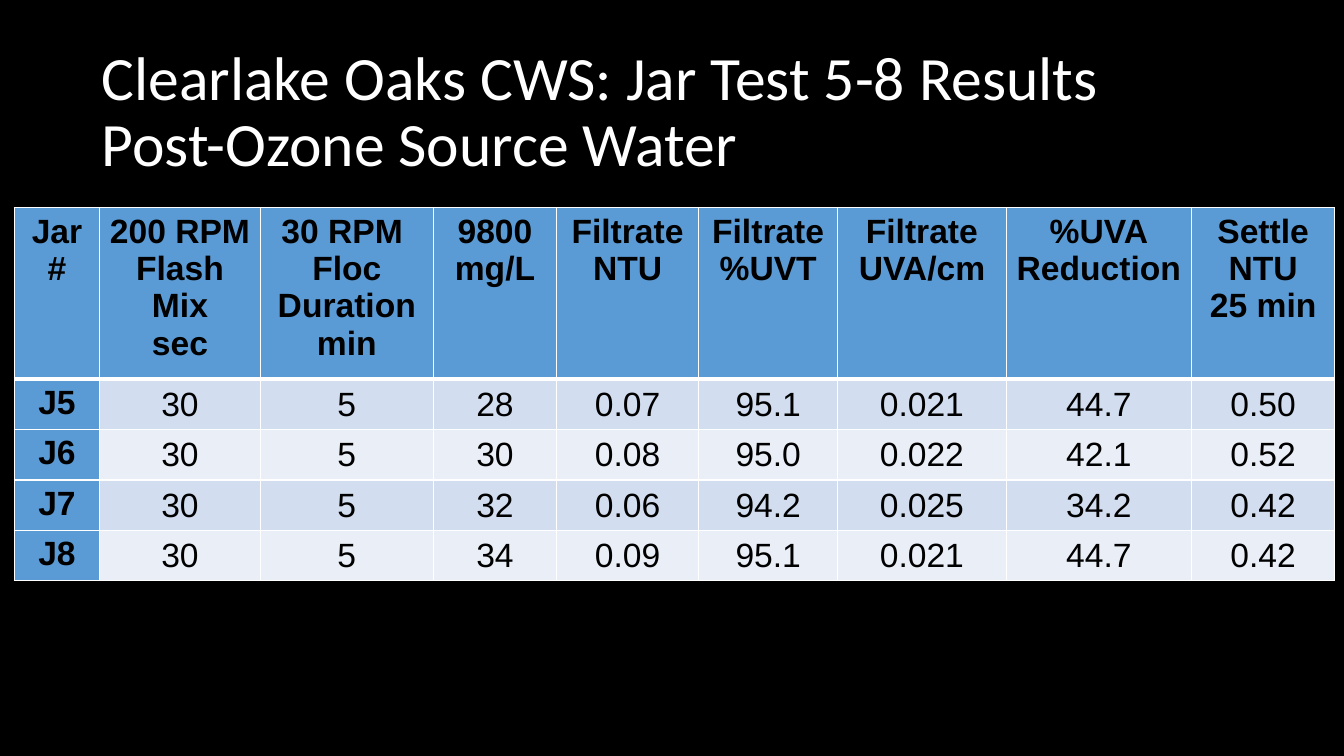
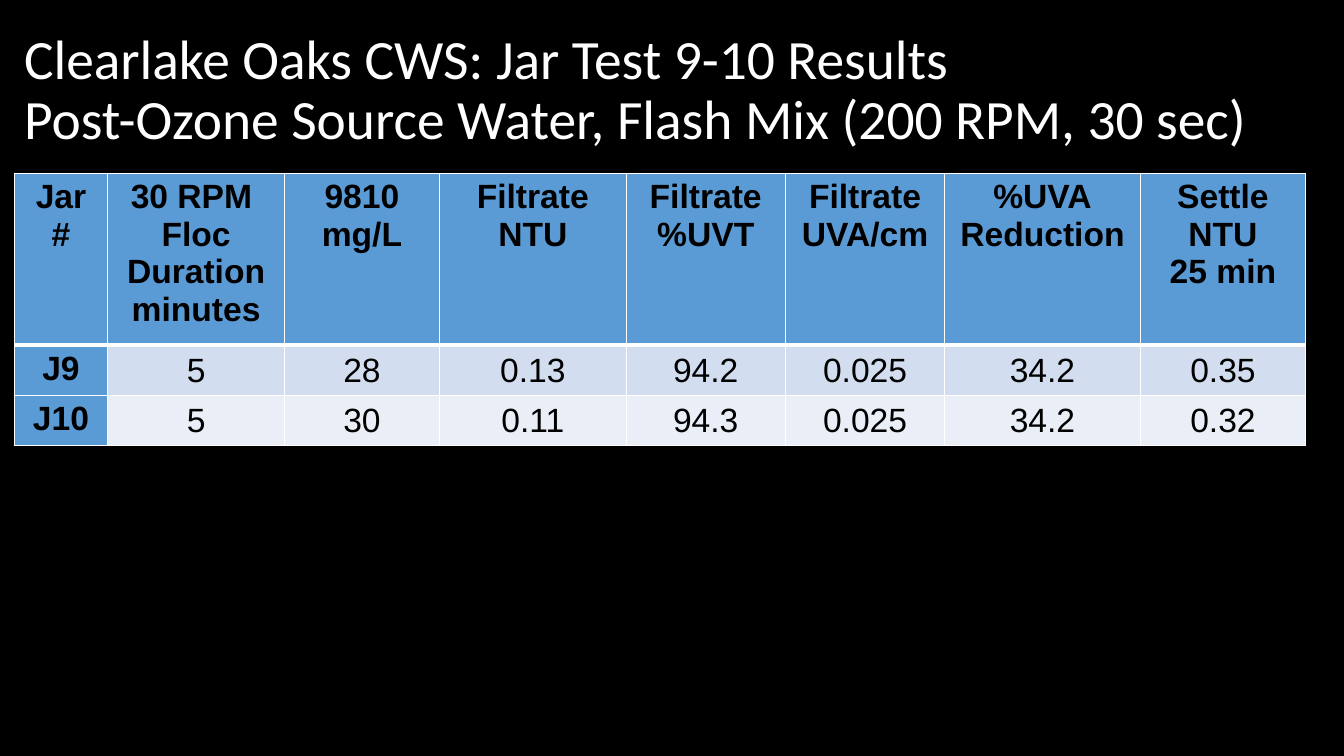
from lxml import etree
from pptx import Presentation
from pptx.dml.color import RGBColor
from pptx.enum.text import MSO_ANCHOR, PP_ALIGN
from pptx.oxml.ns import qn
from pptx.util import Inches, Pt

LEFT, CENTER = PP_ALIGN.LEFT, PP_ALIGN.CENTER
TOP, MIDDLE = MSO_ANCHOR.TOP, MSO_ANCHOR.MIDDLE

COLORS = {
    "back": "000000",
    "title": "FFFFFF",
    "text": "000000",
    "head": "5B9BD5",
    "odd": "D2DEEF",
    "even": "EAEFF7",
    "rule": "FFFFFF",
}
HEAD_H, ROW_H = 1.58, 0.47
THIN, THICK = 1, 3
SIDES = ("left", "top", "right", "bottom")
LABEL = {"anchor": TOP, "pads": (0.1, 0.05, 0.1, 0.05)}
VALUE = {"anchor": MIDDLE, "pads": (0.01, 0.01, 0.01, 0)}

FILTER = ["Filtrate\nNTU", "Filtrate\n%UVT", "Filtrate\nUVA/cm",
          "%UVA\nReduction", "Settle\nNTU\n25 min"]

SLIDES = [
    {
        "title": "Clearlake Oaks CWS: Jar Test 5-8 Results\n"
                 "Post-Ozone Source Water",
        "size": 44,
        "box": (0.91, 0.4, 11.51, 1.45),
        "spot": (0.14, 2.06),
        "cols": [0.85, 1.59, 1.72, 1.22, 1.41, 1.38, 1.67, 1.84, 1.42],
        "rows": [
            ["Jar\n#", "200 RPM \nFlash\nMix\nsec",
             "30 RPM \nFloc\nDuration\nmin", "9800\nmg/L"] + FILTER,
            ["J5", "30", "5", "28", "0.07", "95.1", "0.021", "44.7", "0.50"],
            ["J6", "30", "5", "30", "0.08", "95.0", "0.022", "42.1", "0.52"],
            ["J7", "30", "5", "32", "0.06", "94.2", "0.025", "34.2", "0.42"],
            ["J8", "30", "5", "34", "0.09", "95.1", "0.021", "44.7", "0.42"],
        ],
    },
    {
        "title": "Clearlake Oaks CWS: Jar Test 9-10 Results\n"
                 "Post-Ozone Source Water, Flash Mix (200 RPM, 30 sec)",
        "size": 39.6,
        "box": (0.14, 0.18, 12.92, 1.45),
        "spot": (0.14, 1.72),
        "cols": [0.93, 1.75, 1.54, 1.85, 1.58, 1.58, 1.94, 1.64],
        "rows": [
            ["Jar\n#", "30 RPM \nFloc\nDuration\nminutes",
             "9810\nmg/L"] + FILTER,
            ["J9", "5", "28", "0.13", "94.2", "0.025", "34.2", "0.35"],
            ["J10", "5", "30", "0.11", "94.3", "0.025", "34.2", "0.32"],
        ],
    },
]


def paint(fill, color):
    fill.solid()
    fill.fore_color.rgb = RGBColor.from_string(COLORS[color])


def write(frame, text, color, align, gap, style):
    """Fill a text frame, one paragraph for each line of text."""
    frame.text = text
    for para in frame.paragraphs:
        para.alignment = align
        para.line_spacing = gap
        font = para.runs[0].font
        for key, val in style.items():
            setattr(font, key, val)
        font.color.rgb = RGBColor.from_string(COLORS[color])


def add_title(slide, box, text, size):
    frame = slide.shapes.add_textbox(*map(Inches, box)).text_frame
    frame.word_wrap = True
    frame.vertical_anchor = MIDDLE
    write(frame, text, "title", LEFT, 0.9,
          {"name": "Calibri", "size": Pt(size), "bold": False})


def edge(cell, top, bottom):
    """Rule all four sides of a cell; top and bottom are widths in points."""
    props = cell._tc.get_or_add_tcPr()
    widths = {"lnL": THIN, "lnR": THIN, "lnT": top, "lnB": bottom}
    for tag, width in widths.items():
        line = etree.SubElement(props, qn("a:" + tag), w=str(Pt(width)))
        solid = etree.SubElement(line, qn("a:solidFill"))
        etree.SubElement(solid, qn("a:srgbClr"), val=COLORS["rule"])


def add_cell(cell, text, row, col):
    label = row == 0 or col == 0
    form = LABEL if label else VALUE
    cell.vertical_anchor = form["anchor"]
    for side, pad in zip(SIDES, form["pads"]):
        setattr(cell, "margin_" + side, Inches(pad))
    edge(cell, THICK if row == 1 else THIN, THICK if row == 0 else THIN)
    paint(cell.fill, "head" if label else "odd" if row % 2 else "even")
    write(cell.text_frame, text, "text", CENTER, 1.0,
          {"name": "Arial", "size": Pt(24), "bold": label})


def add_grid(slide, spot, cols, rows):
    highs = [HEAD_H] + [ROW_H] * (len(rows) - 1)
    box = (*spot, sum(cols), sum(highs))
    table = slide.shapes.add_table(
        len(rows), len(cols), *map(Inches, box)).table
    for col, width in zip(table.columns, cols):
        col.width = Inches(width)
    for row, high in zip(table.rows, highs):
        row.height = Inches(high)
    for r, row in enumerate(rows):
        for c, text in enumerate(row):
            add_cell(table.cell(r, c), text, r, c)


def add_slide(deck, data):
    slide = deck.slides.add_slide(deck.slide_layouts[6])
    paint(slide.background.fill, "back")
    add_title(slide, data["box"], data["title"], data["size"])
    add_grid(slide, data["spot"], data["cols"], data["rows"])


def main():
    deck = Presentation()
    deck.slide_width, deck.slide_height = Inches(13.33), Inches(7.5)
    for data in SLIDES:
        add_slide(deck, data)
    deck.save("out.pptx")


if __name__ == "__main__":
    main()
